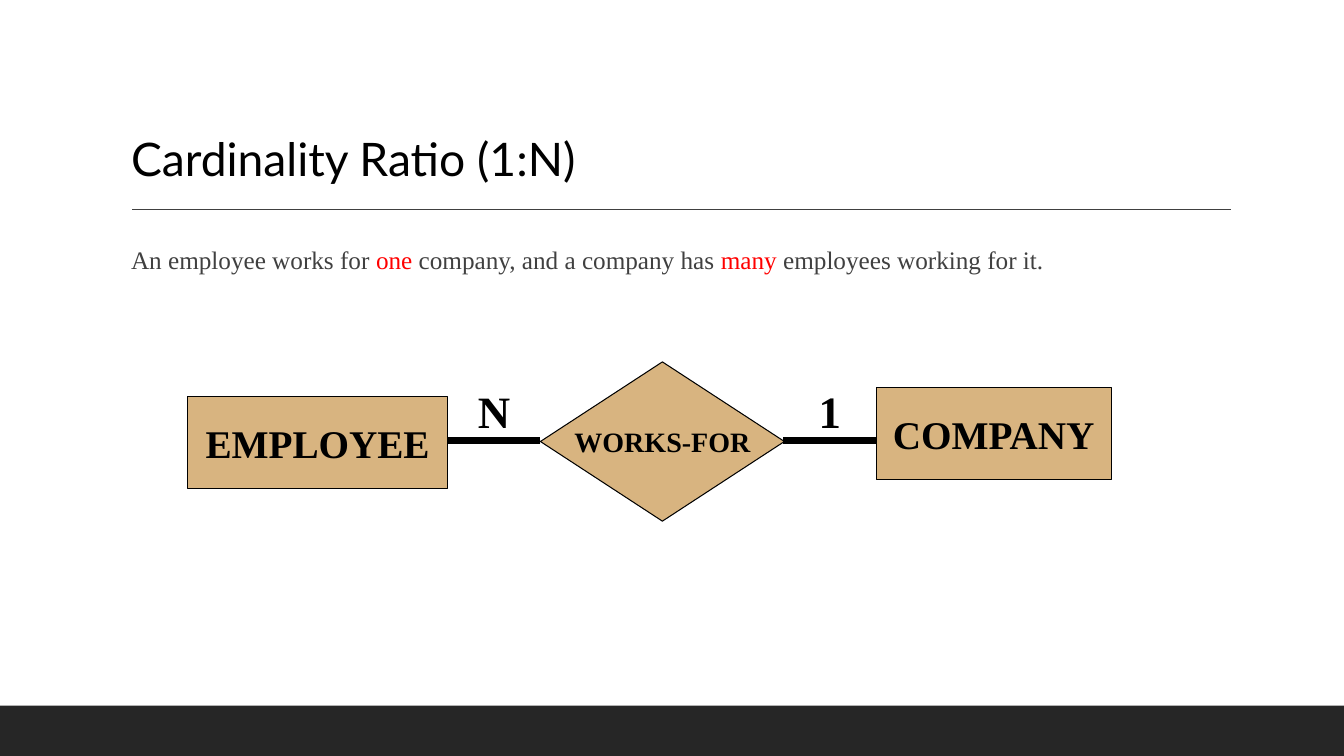
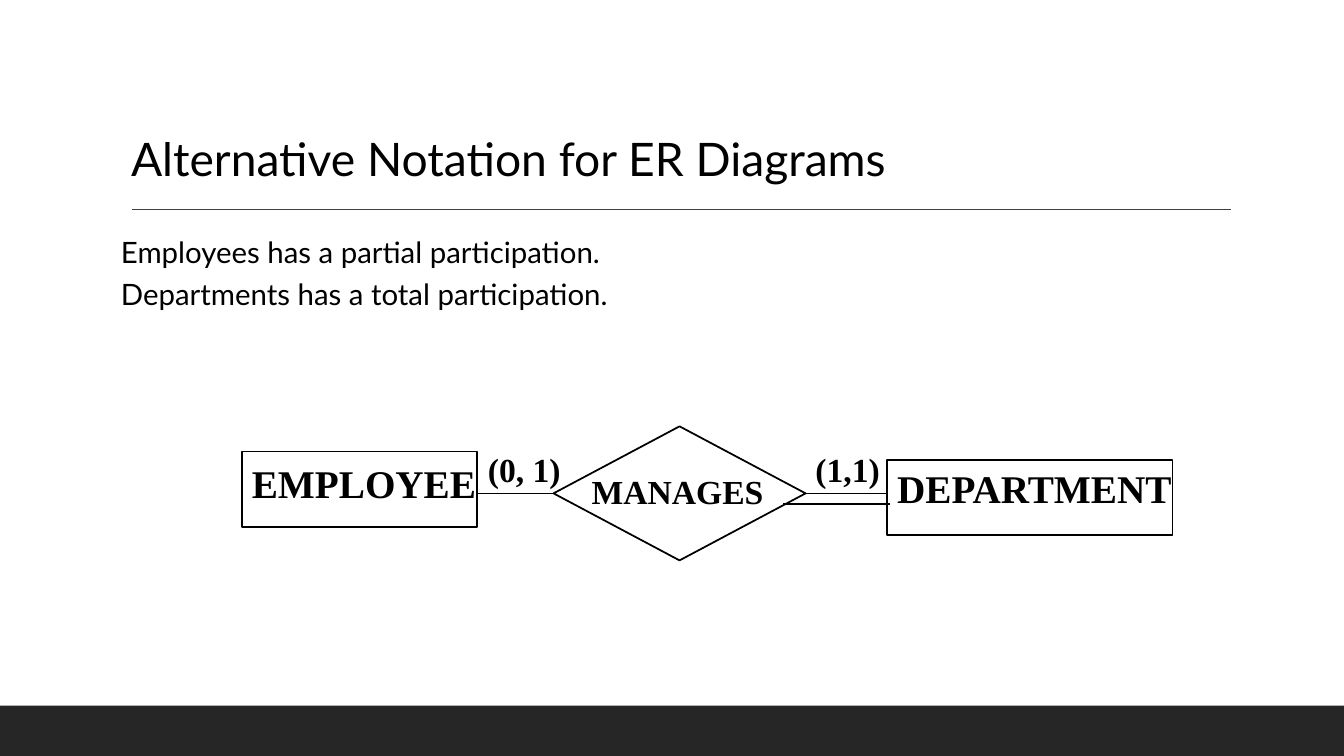
"""Build two slides on cardinality and participation in ER diagrams."""
from dataclasses import dataclass

from lxml import etree
from pptx import Presentation
from pptx.dml.color import RGBColor
from pptx.enum import shapes, text
from pptx.oxml import ns
from pptx.util import Inches, Pt


@dataclass(frozen=True)
class Theme:
    heading: str = "Lato"
    diagram: str = "Times New Roman"
    ink: str = "000000"
    grey: str = "404040"
    accent: str = "FF0000"
    band: str = "262626"
    entity: str = "B26B02"
    title_size: float = 33
    point_size: float = 21
    sentence_size: float = 18
    entity_size: float = 28
    relation_size: float = 20
    ratio_size: float = 32
    notation_size: float = 24
    hairline: float = 0.75
    rule: float = 1
    outline: float = 1.25
    heavy: float = 4.5


T = Theme()
MSO = shapes.MSO_SHAPE
ALIGN = text.PP_ALIGN
ANCHOR = text.MSO_ANCHOR


@dataclass(frozen=True)
class Box:
    left: float
    top: float
    width: float
    height: float

    def emu(self):
        return tuple(Inches(v) for v in (self.left, self.top, self.width, self.height))


@dataclass(frozen=True)
class Node:
    kind: MSO
    box: Box
    label: str = ""
    size: float = T.entity_size


@dataclass(frozen=True)
class Label:
    label: str
    box: Box
    size: float = T.notation_size
    align: ALIGN = ALIGN.LEFT


@dataclass(frozen=True)
class Link:
    start: float
    end: float
    y: float


TITLE = Box(1.2, 0.31, 11, 1.59)
BAND = Box(0, 7, 13.33, 0.5)
RULE = Link(1.31, 12.21, 2.08)

RATIO_NODES = (
    Node(MSO.RECTANGLE, Box(1.86, 3.93, 2.58, 0.92), "EMPLOYEE"),
    Node(MSO.FLOWCHART_DECISION, Box(5.36, 3.59, 2.42, 1.58), "WORKS-FOR", T.relation_size),
    Node(MSO.RECTANGLE, Box(8.69, 3.84, 2.33, 0.92), "COMPANY"),
)
RATIO_LINKS = (Link(5.36, 4.44, 4.37), Link(7.77, 8.69, 4.37))
RATIO_LABELS = (
    Label("N", Box(4.61, 3.76, 0.58, 0.63), T.ratio_size, ALIGN.CENTER),
    Label("1", Box(7.94, 3.76, 0.58, 0.63), T.ratio_size, ALIGN.CENTER),
)

NOTATION_NODES = (
    Node(MSO.DIAMOND, Box(5.49, 4.23, 2.5, 1.33)),
    Node(MSO.RECTANGLE, Box(2.4, 4.48, 2.33, 0.75)),
    Node(MSO.RECTANGLE, Box(8.8, 4.56, 2.83, 0.75)),
)
NOTATION_LINKS = (Link(4.74, 5.49, 4.9), Link(7.99, 8.8, 4.9), Link(7.77, 8.83, 5))
NOTATION_LABELS = (
    Label("MANAGES", Box(5.77, 4.62, 1.92, 0.5)),
    Label("EMPLOYEE", Box(2.4, 4.51, 2.45, 0.57), T.entity_size),
    Label("(0, 1)", Box(4.74, 4.4, 0.92, 0.5)),
    Label("(1,1)", Box(7.99, 4.4, 0.84, 0.5)),
    Label("DEPARTMENT", Box(8.8, 4.56, 2.95, 0.57), T.entity_size),
)


def rgb(color: str) -> RGBColor:
    return RGBColor.from_string(color)


def write(p, content: str, *, size: float, font: str = T.diagram, color: str = T.ink,
          bold: bool = False, align: ALIGN = ALIGN.LEFT):
    r = p.add_run()
    r.text = content
    r.font.size, r.font.name, r.font.bold = Pt(size), font, bold
    r.font.color.rgb = rgb(color)
    p.alignment = align
    return r


def add_text_box(slide, box: Box, *, wrap: bool = True, side: float = 0.1):
    tf = slide.shapes.add_textbox(*box.emu()).text_frame
    tf.word_wrap = wrap
    tf.margin_left = tf.margin_right = Inches(side)
    return tf


def add_filled(slide, kind: MSO, box: Box, fill: str | None = None, *,
               alpha: int = 100, line: float = 0):
    sp = slide.shapes.add_shape(kind, *box.emu())
    sp.shadow.inherit = False
    if fill:
        sp.fill.solid()
        sp.fill.fore_color.rgb = rgb(fill)
    else:
        sp.fill.background()
    if alpha < 100:
        clr = sp.fill._xPr.find(ns.qn("a:solidFill"))[0]
        etree.SubElement(clr, ns.qn("a:alpha"), val=str(alpha * 1000))
    if line:
        sp.line.color.rgb = rgb(T.ink)
        sp.line.width = Pt(line)
    else:
        sp.line.fill.background()
    return sp


def add_link(slide, link: Link, width: float, color: str = T.ink):
    cx = slide.shapes.add_connector(
        shapes.MSO_CONNECTOR.STRAIGHT,
        Inches(link.start), Inches(link.y), Inches(link.end), Inches(link.y))
    cx.line.color.rgb = rgb(color)
    cx.line.width = Pt(width)
    etree.SubElement(cx._element.spPr, ns.qn("a:effectLst"))


def add_node(slide, node: Node, *, fill: str | None = None, alpha: int = 100, line: float):
    sp = add_filled(slide, node.kind, node.box, fill, alpha=alpha, line=line)
    if node.label:
        tf = sp.text_frame
        tf.word_wrap = False
        tf.vertical_anchor = ANCHOR.MIDDLE
        write(tf.paragraphs[0], node.label, size=node.size, bold=True, align=ALIGN.CENTER)


def add_label(slide, label: Label):
    tf = add_text_box(slide, label.box, wrap=label.align == ALIGN.CENTER)
    tf.auto_size = text.MSO_AUTO_SIZE.SHAPE_TO_FIT_TEXT
    write(tf.paragraphs[0], label.label, size=label.size, bold=True, align=label.align)


def add_slide(prs, title: str):
    slide = prs.slides.add_slide(prs.slide_layouts[5])
    add_filled(slide, MSO.RECTANGLE, BAND, T.band)
    add_link(slide, RULE, T.rule, T.grey)
    sp = slide.shapes.title
    sp.left, sp.top, sp.width, sp.height = TITLE.emu()
    tf = sp.text_frame
    tf.auto_size = text.MSO_AUTO_SIZE.NONE
    tf.vertical_anchor = ANCHOR.BOTTOM
    p = tf.paragraphs[0]
    p.line_spacing = 0.9
    write(p, title, size=T.title_size, font=T.heading)
    return slide


def build_ratio(prs):
    slide = add_slide(prs, "Cardinality Ratio (1:N)")
    p = add_text_box(slide, Box(1.3, 2.31, 10.9, 4.11), side=0).paragraphs[0]
    p.line_spacing, p.space_before, p.space_after = 1.2, Pt(12), Pt(2)
    for content, color in (
        ("An employee works for ", T.grey),
        ("one", T.accent),
        (" company, and a company has ", T.grey),
        ("many", T.accent),
        (" employees working for it.", T.grey),
    ):
        write(p, content, size=T.sentence_size, color=color)
    for node in RATIO_NODES:
        add_node(slide, node, fill=T.entity, alpha=50, line=T.hairline)
    for link in RATIO_LINKS:
        add_link(slide, link, T.heavy)
    for label in RATIO_LABELS:
        add_label(slide, label)


def build_notation(prs):
    slide = add_slide(prs, "Alternative Notation for ER Diagrams")
    tf = add_text_box(slide, Box(1.2, 2.31, 11, 4.11), side=0)
    points = ("Employees has a partial participation.", "Departments has a total participation.")
    for i, point in enumerate(points):
        p = tf.add_paragraph() if i else tf.paragraphs[0]
        p.line_spacing, p.space_before = 0.9, Pt(7.5)
        write(p, point, size=T.point_size, font=T.heading)
    for label in NOTATION_LABELS:
        add_label(slide, label)
    for node in NOTATION_NODES:
        add_node(slide, node, line=T.outline)
    for link in NOTATION_LINKS:
        add_link(slide, link, T.hairline)


def main():
    prs = Presentation()
    prs.slide_width, prs.slide_height = Inches(13.33), Inches(7.5)
    build_ratio(prs)
    build_notation(prs)
    prs.save("out.pptx")


if __name__ == "__main__":
    main()
